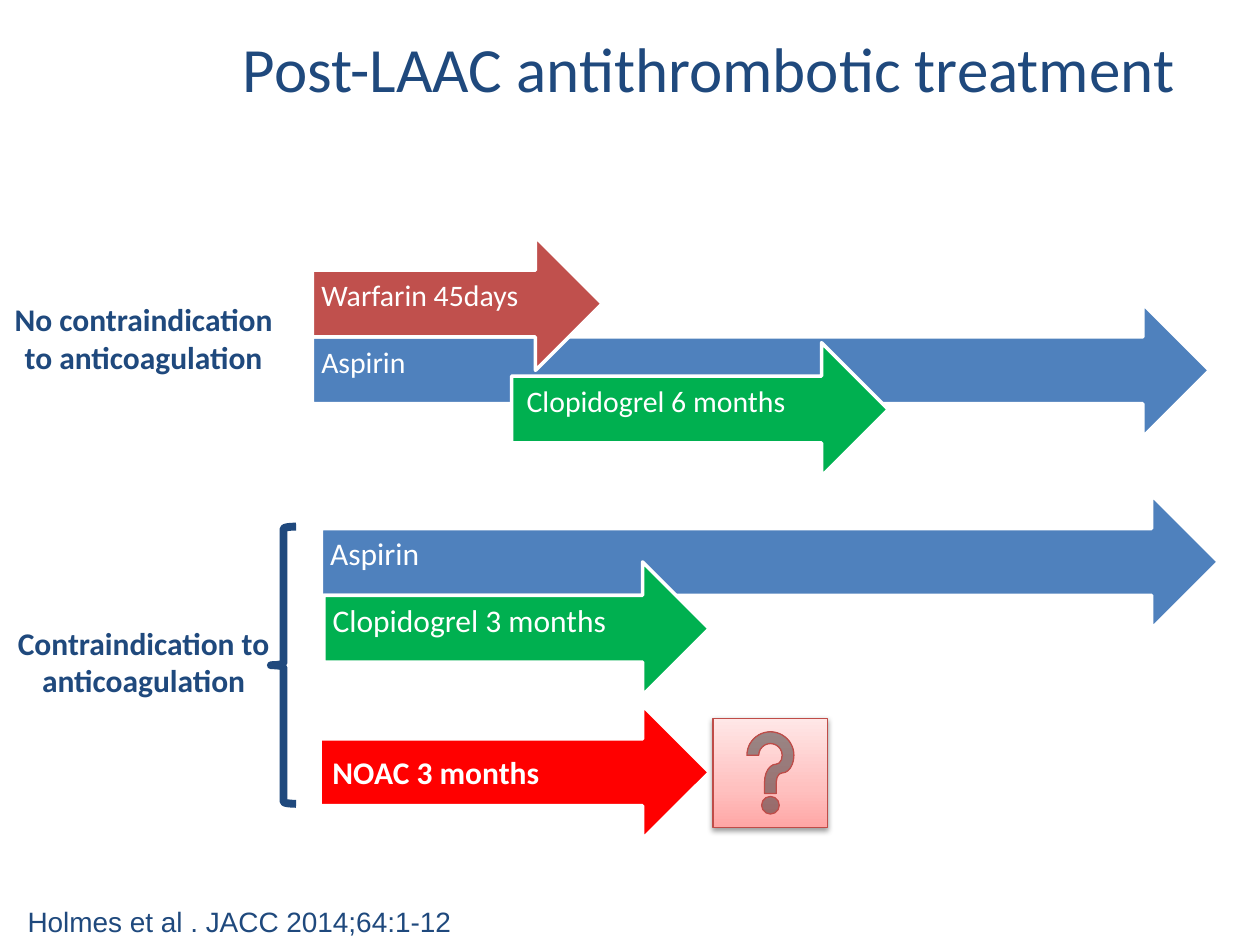
from copy import deepcopy

from lxml.etree import SubElement
from pptx import Presentation
from pptx.dml.color import RGBColor
from pptx.enum.shapes import MSO_SHAPE as SHAPE
from pptx.enum.text import MSO_ANCHOR as ANCHOR, PP_ALIGN as ALIGN
from pptx.oxml.ns import qn
from pptx.util import Inches, Pt

WIDTH, HEIGHT = 10, 7.5
NAVY, BLUE, BRICK, GREEN, RED, WHITE = (
    "1F497D", "4F81BD", "C0504D", "00B050", "FF0000", "FFFFFF")
ARROW_HEIGHT = 1.06
SHAFT_HEIGHT = ARROW_HEIGHT / 2
HEAD_INSET = ARROW_HEIGHT / 4
DEFAULT_INSETS = (0.1, 0.05, 0.1, 0.05)


def rgb(color):
    return RGBColor.from_string(color)


def place(shape, left, top, width, height):
    shape.left, shape.top = Inches(left), Inches(top)
    shape.width, shape.height = Inches(width), Inches(height)


def write(shape, text, size=18, color=NAVY, font="Calibri", bold=False,
          align=ALIGN.LEFT, anchor=ANCHOR.TOP, insets=DEFAULT_INSETS,
          wrap=True, line_spacing=None):
    frame = shape.text_frame
    frame.word_wrap = wrap
    frame.vertical_anchor = anchor
    (frame.margin_left, frame.margin_top,
     frame.margin_right, frame.margin_bottom) = map(Inches, insets)
    paragraph = frame.paragraphs[0]
    paragraph.alignment = align
    if line_spacing:
        paragraph.line_spacing = line_spacing
    run = paragraph.add_run()
    run.text = text
    run.font.name, run.font.size, run.font.bold = font, Pt(size), bold
    run.font.color.rgb = rgb(color)


def add_text(shapes, box, text, **text_format):
    write(shapes.add_textbox(*map(Inches, box)), text, **text_format)


def add_outlined(shapes, kind, box, line, line_width, fill=None):
    shape = shapes.add_shape(kind, *map(Inches, box))
    shape.shadow.inherit = False
    if fill:
        shape.fill.solid()
        shape.fill.fore_color.rgb = rgb(fill)
    else:
        shape.fill.background()
    shape.line.color.rgb = rgb(line)
    shape.line.width = Pt(line_width)
    return shape


def add_arrow(shapes, left, top, width, fill):
    add_outlined(shapes, SHAPE.RIGHT_ARROW, (left, top, width, ARROW_HEIGHT),
                 WHITE, 2, fill)


def add_regimen(slide, size, drugs):
    """Group overlapping drug arrows, each labelled along its shaft."""
    shapes = slide.shapes.add_group_shape().shapes
    for text, left, top, width, fill, indent in drugs:
        add_arrow(shapes, left, top, width, fill)
        box = (left, top + HEAD_INSET, width - HEAD_INSET, SHAFT_HEIGHT)
        add_text(shapes, box, text, size=size, color=WHITE,
                 anchor=ANCHOR.MIDDLE, insets=(indent, 0.07, 0.28, 0.17),
                 line_spacing=0.9)


def set_gradient(shape, stops, angle):
    fill = shape.fill
    fill.gradient()
    fill.gradient_angle = angle
    stop_list = shape._element.spPr.find(".//" + qn("a:gsLst"))
    stop_list.append(deepcopy(stop_list[-1]))
    for stop, (position, color) in zip(fill.gradient_stops, stops):
        stop.position = position
        stop.color.rgb = rgb(color)


def add_shadow(shape, blur, distance, opacity):
    """Cast a black shadow straight down."""
    effects = shape._element.spPr.find(qn("a:effectLst"))
    shadow = SubElement(effects, qn("a:outerShdw"), blurRad=str(Pt(blur)),
                        dist=str(Pt(distance)), dir="5400000", rotWithShape="0")
    color = SubElement(shadow, qn("a:srgbClr"), val="000000")
    SubElement(color, qn("a:alpha"), val=str(opacity * 1000))


def add_question_button(slide, box):
    button = add_outlined(slide.shapes, SHAPE.ACTION_BUTTON_HELP, box,
                          "BF4C48", 0.75, WHITE)
    set_gradient(button, [(0, "FFA6A5"), (0.35, "FFC0BF"), (1, "FFE7E7")], 90)
    add_shadow(button, 3.15, 1.6, 38)


def main():
    presentation = Presentation()
    presentation.slide_width = Inches(WIDTH)
    presentation.slide_height = Inches(HEIGHT)
    slide = presentation.slides.add_slide(presentation.slide_layouts[5])
    shapes = slide.shapes

    place(shapes.title, 1.64, -0.09, 7.97, 1.25)
    write(shapes.title, "Post-LAAC antithrombotic treatment", size=36,
          align=ALIGN.CENTER, anchor=ANCHOR.MIDDLE)

    add_regimen(slide, 17, [
        ("Aspirin", 2.48, 2.41, 7.12, BLUE, 0.07),
        ("Warfarin 45days", 2.48, 1.88, 2.3, BRICK, 0.07),
        ("Clopidogrel 6 months", 4.06, 2.72, 2.99, GREEN, 0.12),
    ])
    add_regimen(slide, 18, [
        ("Aspirin", 2.55, 3.93, 7.12, BLUE, 0.07),
        ("Clopidogrel 3 months", 2.57, 4.46, 3.06, GREEN, 0.07),
    ])
    add_arrow(shapes, 2.54, 5.6, 3.09, RED)
    add_text(shapes, (2.54, 5.93, 3.09, 0.4), "NOAC 3 months",
             color=WHITE, bold=True)

    add_text(shapes, (0.12, 7.13, 3.61, 0.37),
             "Holmes et al . JACC 2014;64:1-12", size=16, font="Arial",
             wrap=False)
    for top, label in [(2.33, "No contraindication to anticoagulation"),
                       (4.9, "Contraindication to anticoagulation")]:
        add_text(shapes, (0, top, 2.28, 0.71), label, bold=True,
                 align=ALIGN.CENTER)

    add_outlined(shapes, SHAPE.LEFT_BRACE, (2.15, 4.18, 0.2, 2.2), NAVY, 4.5)
    add_question_button(slide, (5.66, 5.7, 0.91, 0.87))

    presentation.save("out.pptx")


if __name__ == "__main__":
    main()
